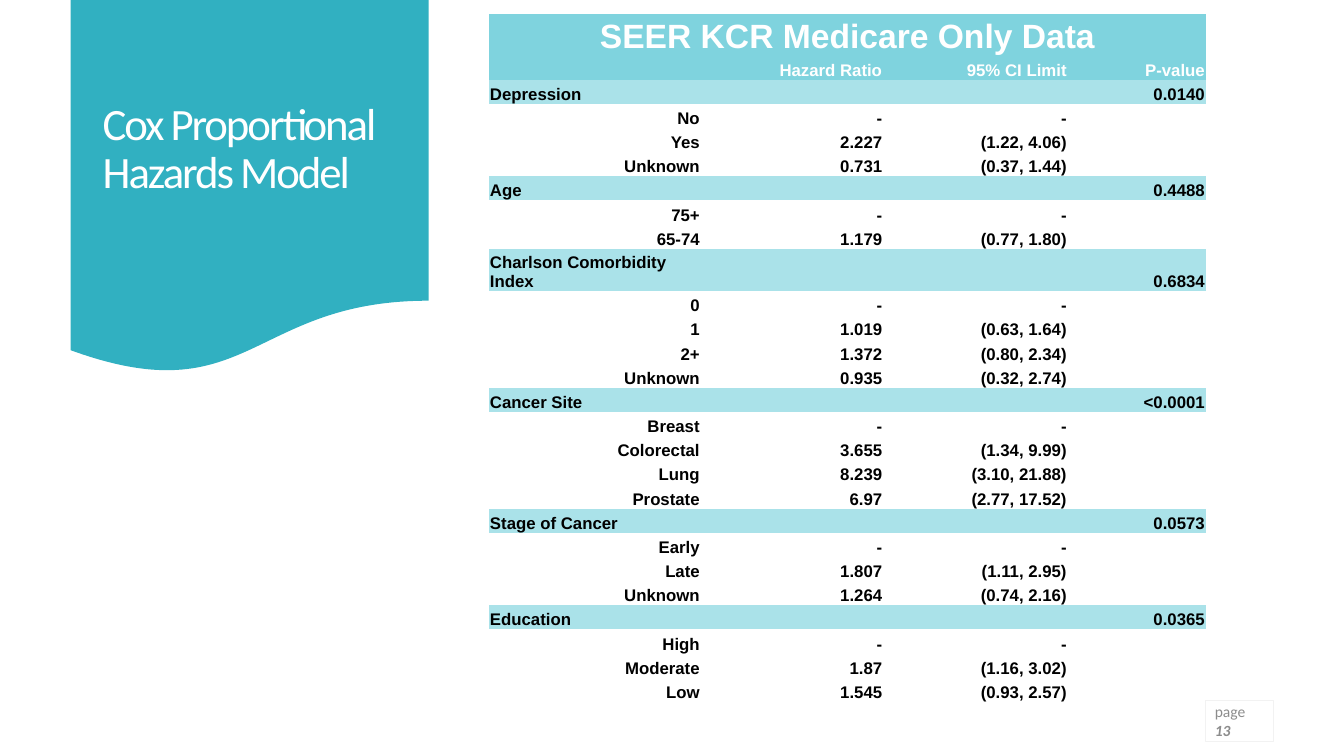
from dataclasses import dataclass
from typing import NamedTuple

from lxml.etree import SubElement
from pptx import Presentation
from pptx.dml.color import RGBColor as RGB
from pptx.enum.shapes import MSO_SHAPE as Shape
from pptx.enum.text import MSO_ANCHOR as Anchor, PP_ALIGN as Align
from pptx.oxml.ns import qn
from pptx.util import Emu, Pt

PX = 9144
PLAIN = "{2D5ABB26-0587-4C30-8999-92F81FD0307C}"


@dataclass(frozen=True)
class Theme:
    teal: RGB = RGB(0x31, 0xB0, 0xC1)
    head: RGB = RGB(0x7F, 0xD3, 0xDE)
    band: RGB = RGB(0xAA, 0xE2, 0xE9)
    white: RGB = RGB(255, 255, 255)
    black: RGB = RGB(0, 0, 0)
    gray: RGB = RGB(0x8C, 0x8C, 0x8C)
    edge: RGB = RGB(0xF2, 0xF2, 0xF2)
    sans: str = "Calibri"
    grid: str = "Arial"
    title: float = 32
    top: float = 24
    body: float = 12
    page: float = 11.1


class Box(NamedTuple):
    x: int
    y: int
    w: int
    h: int


class Level(NamedTuple):
    name: str
    ratio: str = "-"
    limit: str = "-"


class Group(NamedTuple):
    name: str
    pval: str
    levels: list[Level]
    high: int = 24


class Row(NamedTuple):
    texts: tuple[str, ...]
    fill: RGB | None = None
    color: RGB = RGB(0, 0, 0)
    first: Align = Align.RIGHT
    size: float = 12
    high: int = 24


T = Theme()
COLS = (210, 181, 183, 137)
GROUPS = [
    Group("Depression", "0.0140", [
        Level("No"), Level("Yes", "2.227", "(1.22, 4.06)"),
        Level("Unknown", "0.731", "(0.37, 1.44)")]),
    Group("Age", "0.4488", [
        Level("75+"), Level("65-74", "1.179", "(0.77, 1.80)")]),
    Group("Charlson Comorbidity Index", "0.6834", [
        Level("0"), Level("1", "1.019", "(0.63, 1.64)"),
        Level("2+", "1.372", "(0.80, 2.34)"),
        Level("Unknown", "0.935", "(0.32, 2.74)")], 42),
    Group("Cancer Site", "<0.0001", [
        Level("Breast"), Level("Colorectal", "3.655", "(1.34, 9.99)"),
        Level("Lung", "8.239", "(3.10, 21.88)"),
        Level("Prostate", "6.97", "(2.77, 17.52)")]),
    Group("Stage of Cancer", "0.0573", [
        Level("Early"), Level("Late", "1.807", "(1.11, 2.95)"),
        Level("Unknown", "1.264", "(0.74, 2.16)")]),
    Group("Education", "0.0365", [
        Level("High"), Level("Moderate", "1.87", "(1.16, 3.02)"),
        Level("Low", "1.545", "(0.93, 2.57)")]),
]


def emu(box: Box) -> list[Emu]:
    return [Emu(n * PX) for n in box]


def style(run, face: str, size: float, color: RGB, bold: bool = False) -> None:
    font = run.font
    font.name, font.size, font.bold = face, Pt(size), bold
    font.color.rgb = color


def add_flag(slide) -> None:
    flag = slide.shapes.add_shape(Shape.FLOWCHART_DOCUMENT, *emu(Box(70, 0, 355, 372)))
    flag.shadow.inherit = False
    flag.fill.solid()
    flag.fill.fore_color.rgb = T.teal
    flag.line.fill.background()


def add_title(slide) -> None:
    frame = slide.shapes.add_textbox(*emu(Box(92, 19, 311, 259))).text_frame
    frame.word_wrap = True
    frame.vertical_anchor = Anchor.MIDDLE
    frame.text = "Cox Proportional Hazards Model"
    para = frame.paragraphs[0]
    para.line_spacing = 0.9
    run = para.runs[0]
    style(run, T.sans, T.title, T.white)
    run.font._element.set("spc", "-150")


def add_page(slide) -> None:
    box = slide.shapes.add_shape(Shape.RECTANGLE, *emu(Box(1195, 695, 68, 40)))
    box.shadow.inherit = False
    box.fill.background()
    box.line.color.rgb = T.edge
    box.line.width = Pt(0.25)
    frame = box.text_frame
    frame.word_wrap = True
    frame.vertical_anchor = Anchor.MIDDLE
    para = frame.paragraphs[0]
    para.alignment = Align.LEFT
    para.space_after = Pt(6)
    for text, strong in (("page ", False), ("13", True)):
        run = para.add_run()
        run.text = text
        style(run, T.sans, T.page, T.gray, strong)
        run.font.italic = strong


def list_rows() -> list[Row]:
    rows = [
        Row(("SEER KCR Medicare Only Data", "", "", ""), T.head, T.white,
            Align.CENTER, T.top, 40),
        Row(("", "Hazard Ratio", "95% CI Limit", "P-value"), T.head, T.white),
    ]
    for group in GROUPS:
        rows.append(Row((group.name, "", "", group.pval), T.band, T.black,
                        Align.LEFT, T.body, group.high))
        rows += [Row((*level, "")) for level in group.levels]
    return rows


def fill_cell(cell, text: str, row: Row, align: Align) -> None:
    cell.margin_left = cell.margin_right = cell.margin_top = Emu(PX)
    cell.margin_bottom = 0
    cell.vertical_anchor = Anchor.BOTTOM
    if row.fill is None:
        cell.fill.background()
    else:
        cell.fill.solid()
        cell.fill.fore_color.rgb = row.fill
    para = cell.text_frame.paragraphs[0]
    para.alignment = align
    if text:
        para.text = text
        style(para.runs[0], T.grid, row.size, row.color, True)
    else:
        SubElement(para._p, qn("a:endParaRPr"), sz=str(int(T.body * 100)))


def add_grid(slide) -> None:
    rows = list_rows()
    box = Box(485, 14, sum(COLS), sum(row.high for row in rows))
    table = slide.shapes.add_table(len(rows), len(COLS), *emu(box)).table
    table.first_row = table.horz_banding = False
    table._tbl.tblPr.find(qn("a:tableStyleId")).text = PLAIN
    for col, wide in zip(table.columns, COLS):
        col.width = Emu(wide * PX)
    for r, row in enumerate(rows):
        table.rows[r].height = Emu(row.high * PX)
        for c, text in enumerate(row.texts):
            fill_cell(table.cell(r, c), text, row, Align.RIGHT if c else row.first)
    table.cell(0, 0).merge(table.cell(0, len(COLS) - 1))


def main() -> None:
    """Build the Cox proportional hazards slide and save it."""
    deck = Presentation()
    deck.slide_width, deck.slide_height = Emu(1333 * PX), Emu(750 * PX)
    slide = deck.slides.add_slide(deck.slide_layouts[6])
    add_flag(slide)
    add_title(slide)
    add_page(slide)
    add_grid(slide)
    deck.save("out.pptx")


if __name__ == "__main__":
    main()
